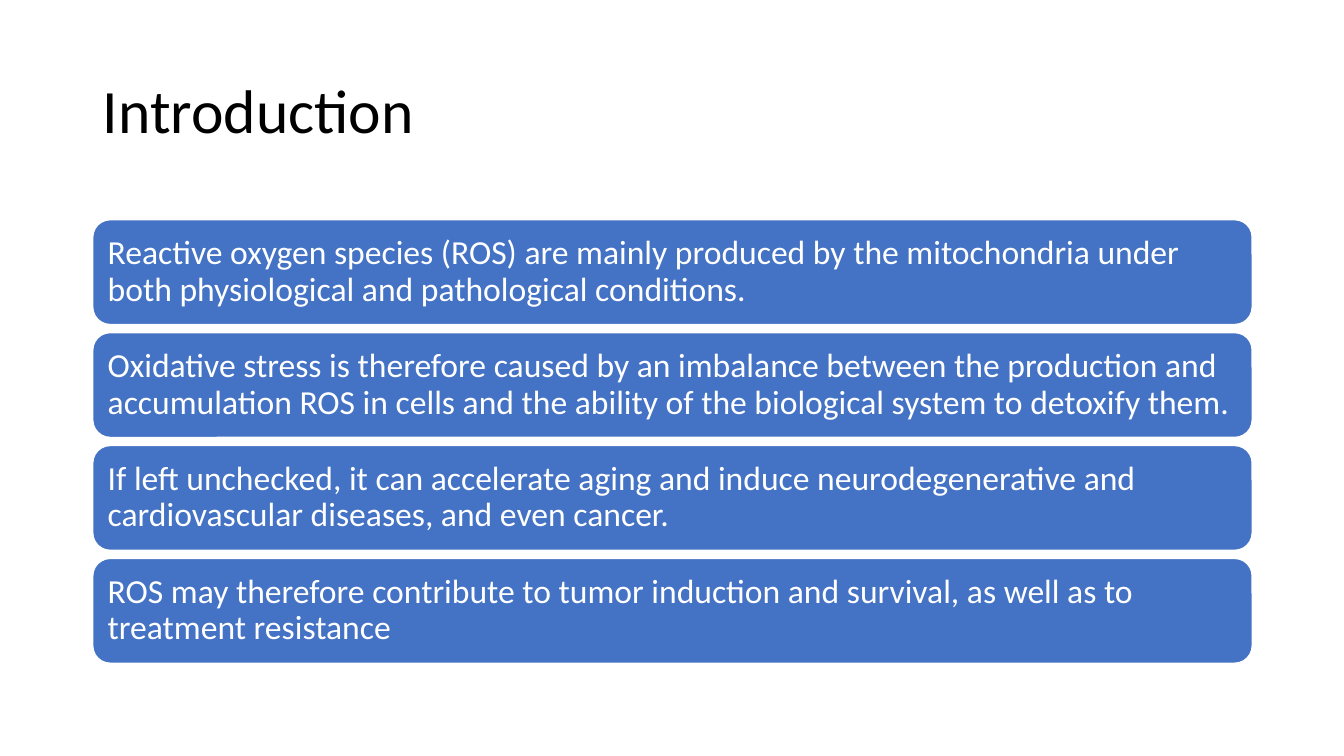
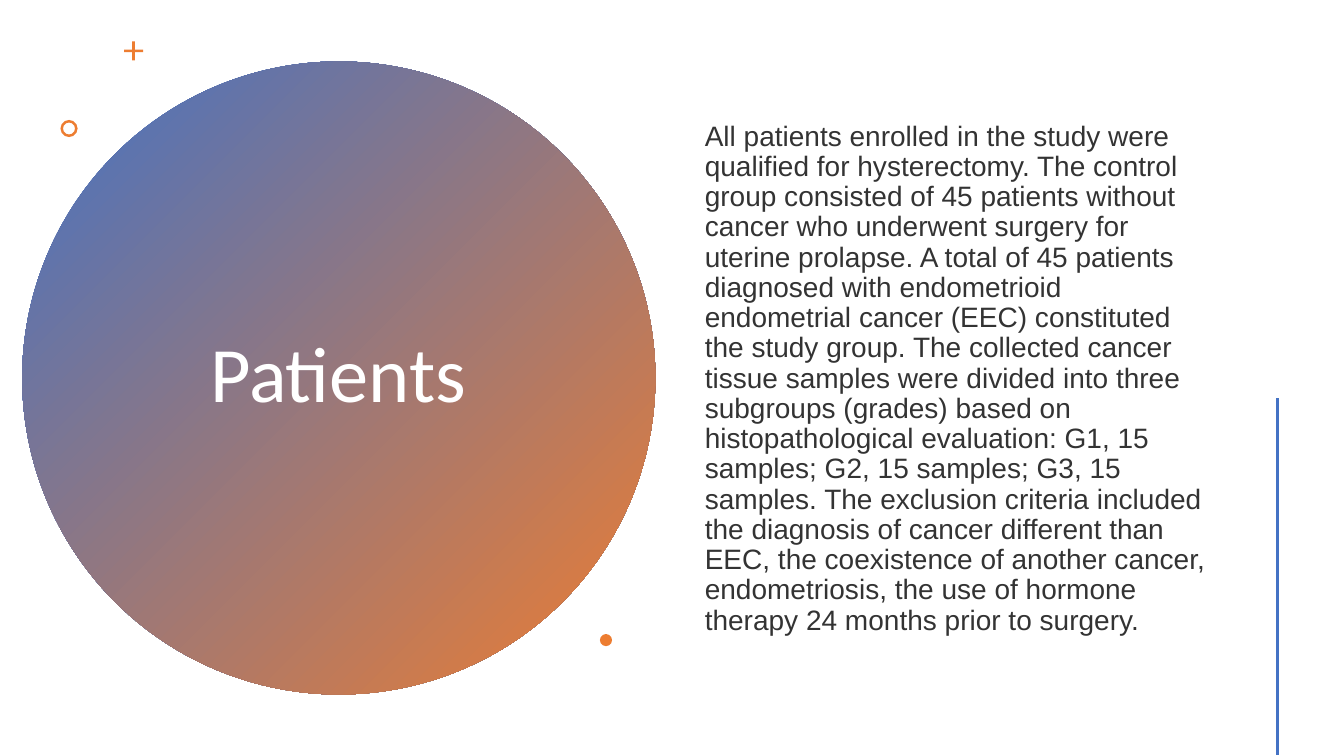
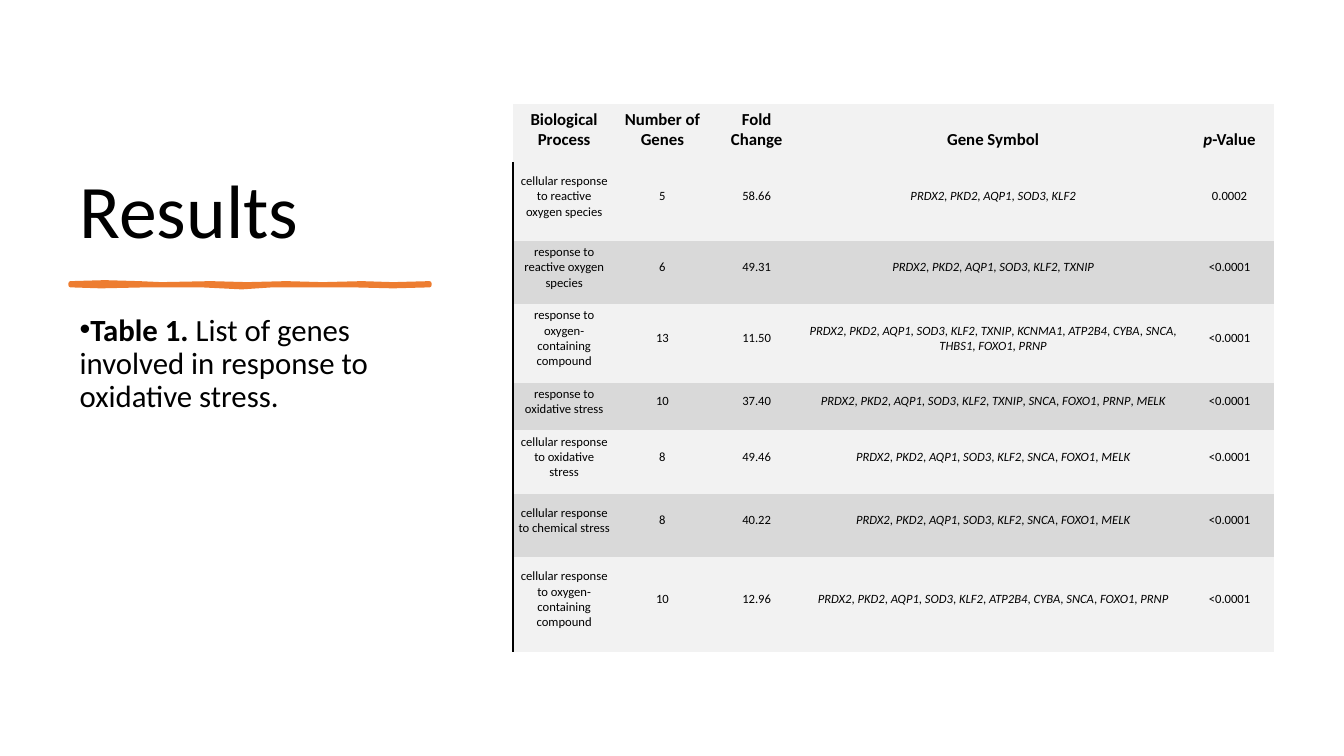
from lxml.etree import SubElement
from pptx import Presentation
from pptx.dml.color import RGBColor
from pptx.enum.shapes import MSO_CONNECTOR, MSO_SHAPE
from pptx.enum.text import MSO_ANCHOR, MSO_AUTO_SIZE, PP_ALIGN
from pptx.oxml import parse_xml
from pptx.oxml.ns import nsdecls, qn
from pptx.util import Inches, Pt

BLUE, ORANGE = "4472C4", "ED7D31"
BLACK, WHITE, DARK = "000000", "FFFFFF", "333333"
ROW_FILLS = ("F2F2F2", "D9D9D9")
NO_STYLE = "{2D5ABB26-0587-4C30-8999-92F81FD0307C}"
TITLE_ONLY, TITLE_AND_CONTENT = 5, 1

STATEMENTS = [
    "Reactive oxygen species (ROS) are mainly produced by the mitochondria under both "
    "physiological and pathological conditions.",
    "Oxidative stress is therefore caused by an imbalance between the production and "
    "accumulation ROS in cells and the ability of the biological system to detoxify them.",
    "If left unchecked, it can accelerate aging and induce neurodegenerative and "
    "cardiovascular diseases, and even cancer.",
    "ROS may therefore contribute to tumor induction and survival, as well as to "
    "treatment resistance",
]

PATIENTS = (
    "All patients enrolled in the study were qualified for hysterectomy. The control group "
    "consisted of 45 patients without cancer who underwent surgery for uterine prolapse. "
    "A total of 45 patients diagnosed with endometrioid endometrial cancer (EEC) constituted "
    "the study group. The collected cancer tissue samples were divided into three subgroups "
    "(grades) based on histopathological evaluation: G1, 15 samples; G2, 15 samples; G3, 15 "
    "samples. The exclusion criteria included the diagnosis of cancer different than EEC, the "
    "coexistence of another cancer, endometriosis, the use of hormone therapy 24 months prior "
    "to surgery."
)

ACCENTS = [
    (MSO_SHAPE.CROSS, 1.23, 0.41, 0.19, 0.43),
    (MSO_SHAPE.DONUT, 0.6, 1.19, 0.17, 0.15),
    (MSO_SHAPE.OVAL, 5.95, 6.29, 0.12, None),
]

CAPTION = [("Table 1.", True), (" List of genes involved in response to oxidative stress.", False)]

STROKE = [
    (0.7, 2.81), (1.04, 2.8), (1.38, 2.81), (1.6, 2.82), (2.09, 2.81), (2.45, 2.82),
    (2.84, 2.81), (3.2, 2.82), (3.59, 2.81), (3.9, 2.82), (4.26, 2.81), (4.26, 2.83),
    (3.9, 2.84), (3.5, 2.83), (3.1, 2.83), (2.7, 2.83), (2.4, 2.85), (2, 2.83),
    (1.45, 2.83), (1, 2.84), (0.7, 2.83),
]

HEADERS = ["Biological Process", "Number of Genes", "Fold Change", "Gene Symbol", "p-Value"]
COLUMN_WIDTHS = [0.99, 0.96, 0.91, 3.78, 0.91]
ROW_HEIGHTS = [0.58, 0.78, 0.63, 0.78, 0.47, 0.63, 0.63, 0.94]
PROCESSES = [
    ("cellular response to reactive oxygen species", "5", "58.66",
     "PRDX2, PKD2, AQP1, SOD3, KLF2", "0.0002"),
    ("response to reactive oxygen species", "6", "49.31",
     "PRDX2, PKD2, AQP1, SOD3, KLF2, TXNIP", "<0.0001"),
    ("response to oxygen-containing compound", "13", "11.50",
     "PRDX2, PKD2, AQP1, SOD3, KLF2, TXNIP, KCNMA1, ATP2B4, CYBA, SNCA, THBS1, FOXO1, PRNP",
     "<0.0001"),
    ("response to oxidative stress", "10", "37.40",
     "PRDX2, PKD2, AQP1, SOD3, KLF2, TXNIP, SNCA, FOXO1, PRNP, MELK", "<0.0001"),
    ("cellular response to oxidative stress", "8", "49.46",
     "PRDX2, PKD2, AQP1, SOD3, KLF2, SNCA, FOXO1, MELK", "<0.0001"),
    ("cellular response to chemical stress", "8", "40.22",
     "PRDX2, PKD2, AQP1, SOD3, KLF2, SNCA, FOXO1, MELK", "<0.0001"),
    ("cellular response to oxygen-containing compound", "10", "12.96",
     "PRDX2, PKD2, AQP1, SOD3, KLF2, ATP2B4, CYBA, SNCA, FOXO1, PRNP", "<0.0001"),
]


def color(value):
    return RGBColor.from_string(value)


def place(shape, left, top, width, height):
    shape.left, shape.top = Inches(left), Inches(top)
    shape.width, shape.height = Inches(width), Inches(height)


def format_paragraph(paragraph, size, text_color=BLACK, align=PP_ALIGN.LEFT, name="Calibri",
                     line_spacing=0.9, bold=None):
    paragraph.alignment = align
    paragraph.line_spacing = line_spacing
    paragraph.space_before = paragraph.space_after = Pt(0)
    font = paragraph.font
    font.name, font.size, font.bold = name, Pt(size), bold
    font.color.rgb = color(text_color)


def add_slide(presentation, layout, title, box, size, anchor=MSO_ANCHOR.MIDDLE, **style):
    slide = presentation.slides.add_slide(presentation.slide_layouts[layout])
    place(slide.shapes.title, *box)
    frame = slide.shapes.title.text_frame
    frame.text, frame.vertical_anchor = title, anchor
    frame.auto_size = MSO_AUTO_SIZE.NONE
    format_paragraph(frame.paragraphs[0], size, **style)
    return slide


def prepare_body(slide, box, anchor, bullet=None):
    body = slide.placeholders[1]
    place(body, *box)
    frame = body.text_frame
    frame.vertical_anchor, frame.auto_size = anchor, MSO_AUTO_SIZE.NONE
    paragraph = frame.paragraphs[0]
    properties = paragraph._p.get_or_add_pPr()
    properties.set("marL", "0")
    properties.set("indent", str(Inches(-0.25) if bullet else 0))
    if bullet:
        SubElement(properties, qn("a:buChar"), char=bullet)
    else:
        SubElement(properties, qn("a:buNone"))
    return paragraph


def add_filled(slide, kind, box, fill):
    shape = slide.shapes.add_shape(kind, *map(Inches, box))
    shape.shadow.inherit = False
    shape.fill.solid()
    shape.fill.fore_color.rgb = color(fill)
    shape.line.fill.background()
    return shape


def add_introduction(presentation):
    slide = add_slide(presentation, TITLE_ONLY, "Introduction", (0.92, 0.4, 11.5, 1.45), 44)
    for index, statement in enumerate(STATEMENTS):
        box = (0.92, 2.18 + index * 1.12, 11.5, 1.04)
        shape = add_filled(slide, MSO_SHAPE.ROUNDED_RECTANGLE, box, BLUE)
        shape.line.color.rgb, shape.line.width = color(WHITE), Pt(1)
        frame = shape.text_frame
        frame.text, frame.vertical_anchor, frame.word_wrap = statement, MSO_ANCHOR.MIDDLE, True
        frame.margin_left, frame.margin_right = Inches(0.1), Inches(0.05)
        format_paragraph(frame.paragraphs[0], 24, WHITE)


def add_patients(presentation):
    slide = add_slide(presentation, TITLE_AND_CONTENT, "Patients", (1.36, 1.41, 3.99, 4.67), 56,
                      text_color=WHITE, align=PP_ALIGN.CENTER)
    circle = add_filled(slide, MSO_SHAPE.OVAL, (0.22, 0.61, 6.28, 6.28), BLUE)
    circle.fill.gradient()
    circle.fill.gradient_angle = 315
    for stop, value in zip(circle.fill.gradient_stops, (BLUE, ORANGE)):
        stop.color.rgb = color(value)
    slide.shapes.title._element.addprevious(circle._element)

    for kind, left, top, size, adjustment in ACCENTS:
        accent = add_filled(slide, kind, (left, top, size, size), ORANGE)
        if adjustment:
            accent.adjustments[0] = adjustment

    paragraph = prepare_body(slide, (6.89, 0.57, 5.22, 6.38), MSO_ANCHOR.MIDDLE)
    paragraph.text = PATIENTS
    format_paragraph(paragraph, 20, DARK, name="Arial")

    line = slide.shapes.add_connector(MSO_CONNECTOR.STRAIGHT, Inches(12.67), Inches(3.95),
                                      Inches(12.67), Inches(7.49))
    line.line.color.rgb, line.line.width = color(BLUE), Pt(2)
    SubElement(line._element.spPr, qn("a:effectLst"))


def split_runs(text, column, is_header):
    if is_header:
        return [("p", True), ("-Value", False)] if text == "p-Value" else [(text, False)]
    if HEADERS[column] != "Gene Symbol":
        return [(text, False)]
    runs = []
    for gene in text.split(", "):
        runs += [(", ", False), (gene, True)]
    return runs[1:]


def fill_cell(cell, text, row, column):
    is_header = row == 0
    cell.margin_left, cell.margin_top = Inches(0.05), Inches(0.02)
    cell.margin_right, cell.margin_bottom = Inches(0.03), Inches(0.12)
    cell.vertical_anchor = MSO_ANCHOR.BOTTOM if is_header else MSO_ANCHOR.MIDDLE
    cell.fill.solid()
    cell.fill.fore_color.rgb = color(ROW_FILLS[0 if is_header else (row - 1) % 2])
    paragraph = cell.text_frame.paragraphs[0]
    for run_text, italic in split_runs(text, column, is_header):
        run = paragraph.add_run()
        run.text, run.font.italic = run_text, italic
    format_paragraph(paragraph, 12 if is_header else 9, align=PP_ALIGN.CENTER,
                     line_spacing=1.0, bold=is_header)
    if column == 0 and not is_header:
        border = parse_xml(f'<a:lnL {nsdecls("a")} w="{Pt(1.25)}"><a:solidFill>'
                           f'<a:srgbClr val="{BLACK}"/></a:solidFill></a:lnL>')
        cell._tc.get_or_add_tcPr().insert(0, border)


def add_results(presentation):
    slide = add_slide(presentation, TITLE_AND_CONTENT, "Results", (0.69, 0.7, 3.75, 1.88), 54,
                      anchor=MSO_ANCHOR.BOTTOM)
    points = [(Inches(x), Inches(y)) for x, y in STROKE]
    builder = slide.shapes.build_freeform(*points[0])
    builder.add_line_segments(points[1:])
    stroke = builder.convert_to_shape()
    stroke.shadow.inherit = False
    stroke.fill.solid()
    stroke.fill.fore_color.rgb = stroke.line.color.rgb = color(ORANGE)
    stroke.line.width = Pt(3)
    SubElement(stroke.line._get_or_add_ln(), qn("a:round"))

    caption = prepare_body(slide, (0.69, 3.07, 3.75, 3.73), MSO_ANCHOR.TOP, "•")
    for text, bold in CAPTION:
        run = caption.add_run()
        run.text, run.font.bold = text, bold
    format_paragraph(caption, 22)

    frame = slide.shapes.add_table(
        len(ROW_HEIGHTS), len(COLUMN_WIDTHS), Inches(5.09), Inches(1.03),
        Inches(sum(COLUMN_WIDTHS)), Inches(sum(ROW_HEIGHTS)))
    for style in frame._element.iter(qn("a:tableStyleId")):
        style.text = NO_STYLE
    table = frame.table
    for column, width in zip(table.columns, COLUMN_WIDTHS):
        column.width = Inches(width)
    for row, height in zip(table.rows, ROW_HEIGHTS):
        row.height = Inches(height)
    for row, texts in enumerate([HEADERS, *PROCESSES]):
        for column, text in enumerate(texts):
            fill_cell(table.cell(row, column), text, row, column)


def main():
    presentation = Presentation()
    presentation.slide_width, presentation.slide_height = Inches(13.33), Inches(7.5)
    add_introduction(presentation)
    add_patients(presentation)
    add_results(presentation)
    presentation.save("out.pptx")


if __name__ == "__main__":
    main()
